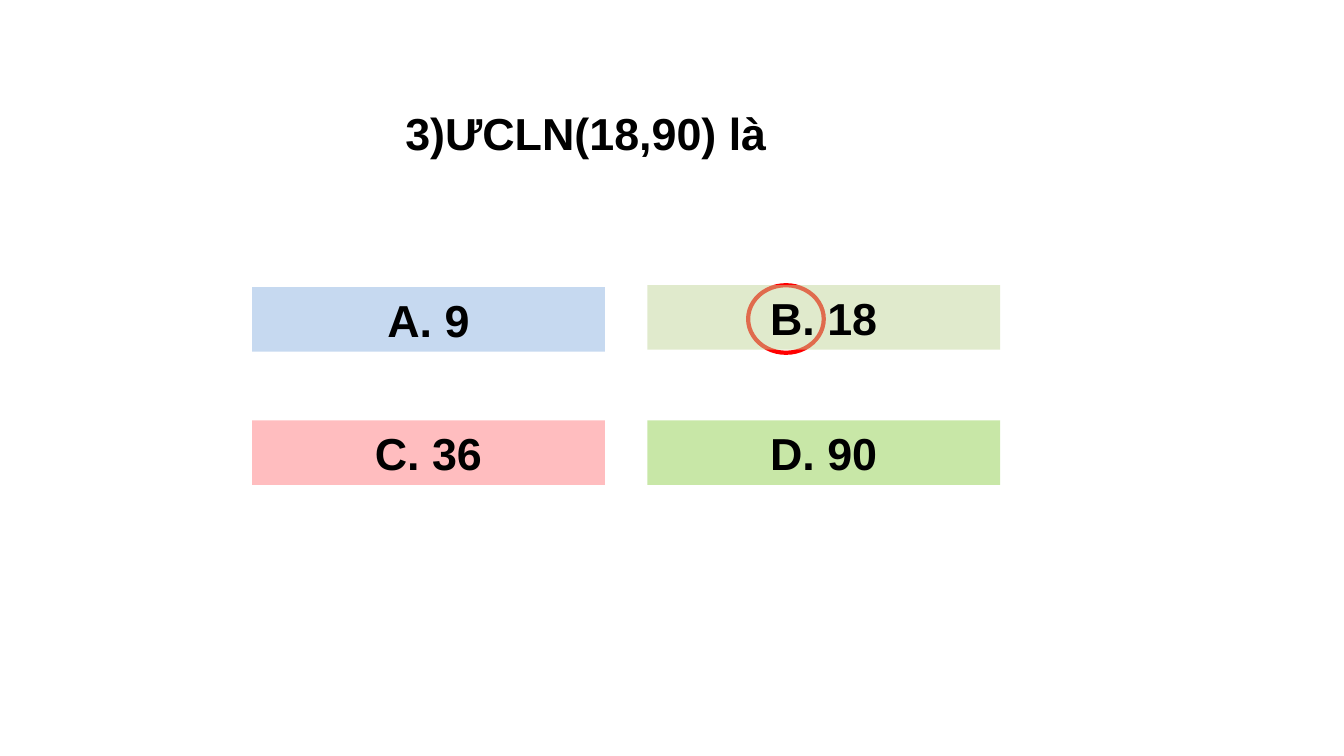
from dataclasses import dataclass

from lxml import etree
from pptx import Presentation
from pptx.dml.color import RGBColor
from pptx.enum.shapes import MSO_SHAPE
from pptx.enum.text import MSO_ANCHOR, MSO_AUTO_SIZE, PP_ALIGN
from pptx.oxml.ns import qn
from pptx.util import Inches, Pt

RECTANGLE, OVAL = MSO_SHAPE.RECTANGLE, MSO_SHAPE.OVAL
MIDDLE, FIT = MSO_ANCHOR.MIDDLE, MSO_AUTO_SIZE.SHAPE_TO_FIT_TEXT
CENTER, JUSTIFY = PP_ALIGN.CENTER, PP_ALIGN.JUSTIFY


@dataclass(frozen=True)
class Theme:
    font: str = "Arial"
    size: int = 32
    ink: str = "000000"
    paper: str = "FFFFFF"
    mark: str = "FF0000"
    mark_width: int = 3
    opacity: int = 50


THEME = Theme()
QUESTION = "3)ƯCLN(18,90) là"
ANSWERS = [
    ("A. 9", "8EB4E3", 0.02),
    ("B. 18", "C3D69B", 0),
    ("C. 36", "FF7C80", 0),
    ("D. 90", "92D050", 0),
]
QUESTION_BOX = (3.92, 1, 3.83, 0.64)
MARK_BOX = (7.42, 2.83, 0.75, 0.67)
COLUMNS = 2
GRID_LEFT, GRID_TOP = 2.5, 2.83
COLUMN_STEP, ROW_STEP = 3.92, 1.34
ANSWER_WIDTH, ANSWER_HEIGHT = 3.5, 0.64


def write(shape, wording, alignment):
    frame = shape.text_frame
    frame.text = wording
    frame.word_wrap = True
    frame.auto_size = FIT
    frame.vertical_anchor = MIDDLE
    paragraph = frame.paragraphs[0]
    paragraph.alignment = alignment
    font = paragraph.runs[0].font
    font.name = THEME.font
    font.size = Pt(THEME.size)
    font.bold = True
    font.color.rgb = RGBColor.from_string(THEME.ink)


def add_filled(slide, preset, box, color):
    shape = slide.shapes.add_shape(preset, *map(Inches, box))
    shape.shadow.inherit = False
    shape.fill.solid()
    shape.fill.fore_color.rgb = RGBColor.from_string(color)
    return shape


def add_question(slide):
    question = slide.shapes.title
    question.left, question.top, question.width, question.height = map(Inches, QUESTION_BOX)
    write(question, QUESTION, JUSTIFY)


def add_mark(slide):
    mark = add_filled(slide, OVAL, MARK_BOX, THEME.paper)
    mark.line.color.rgb = RGBColor.from_string(THEME.mark)
    mark.line.width = Pt(THEME.mark_width)


def add_answers(slide):
    for index, (wording, color, drop) in enumerate(ANSWERS):
        row, column = divmod(index, COLUMNS)
        box = (
            GRID_LEFT + column * COLUMN_STEP,
            GRID_TOP + row * ROW_STEP + drop,
            ANSWER_WIDTH,
            ANSWER_HEIGHT,
        )
        answer = add_filled(slide, RECTANGLE, box, color)
        answer.line.fill.background()
        tint = answer.fill._xPr.find(qn("a:solidFill")).find(qn("a:srgbClr"))
        etree.SubElement(tint, qn("a:alpha")).set("val", str(THEME.opacity * 1000))
        write(answer, wording, CENTER)


def main():
    deck = Presentation()
    deck.slide_width, deck.slide_height = Inches(13.33), Inches(7.5)
    slide = deck.slides.add_slide(deck.slide_layouts.get_by_name("Title Only"))
    add_question(slide)
    add_mark(slide)
    add_answers(slide)
    deck.save("out.pptx")


if __name__ == "__main__":
    main()
